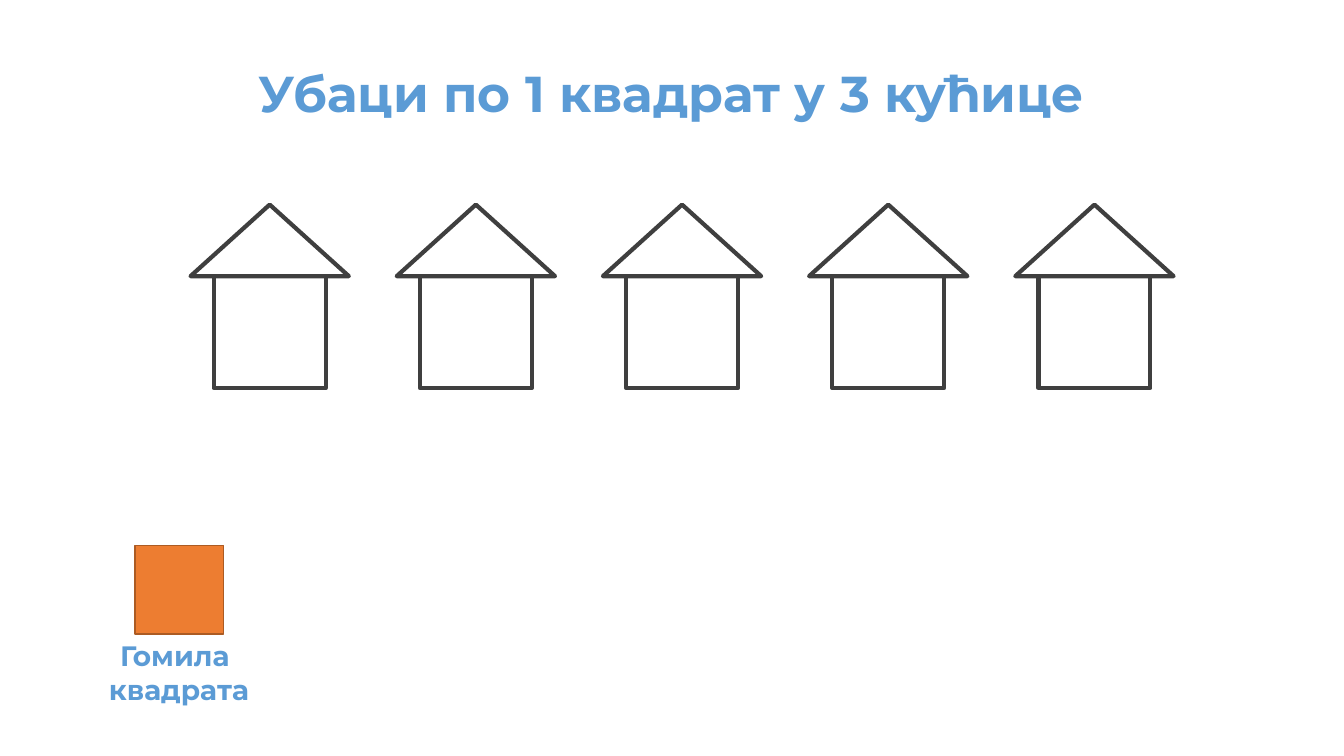
from typing import NamedTuple

from pptx import Presentation
from pptx.dml.color import RGBColor
from pptx.enum import shapes, text
from pptx.util import Inches, Pt

COLORS = {"text": "5B9BD5", "outline": "3F3F3F", "square": "ED7D31", "square_edge": "AC5B23"}
FONT = "Montserrat"

HOUSE_COUNT = 5
FIRST_LEFT, LAST_LEFT = 1.89, 10.07
HOUSE_STEP = (LAST_LEFT - FIRST_LEFT) / (HOUSE_COUNT - 1)


class Box(NamedTuple):
    left: float
    top: float
    width: float
    height: float

    def shifted(self, dx: float) -> "Box":
        return self._replace(left=self.left + dx)

    def lengths(self) -> list:
        return [Inches(value) for value in self]


class Part(NamedTuple):
    kind: shapes.MSO_SHAPE
    box: Box
    line: str
    line_width: float
    fill: str | None = None


class Caption(NamedTuple):
    lines: tuple[str, ...]
    box: Box
    size: float


HOUSE = (
    Part(shapes.MSO_SHAPE.RECTANGLE, Box(FIRST_LEFT + 0.23, 2.74, 1.11, 1.11), "outline", 3),
    Part(shapes.MSO_SHAPE.ISOSCELES_TRIANGLE, Box(FIRST_LEFT, 2.03, 1.57, 0.71), "outline", 3),
)
PILE_SQUARE = Part(
    shapes.MSO_SHAPE.RECTANGLE, Box(1.34, 5.41, 0.88, 0.88), "square_edge", 1, "square"
)
TITLE = Caption(("Убаци по 1 квадрат у 3 кућице",), Box(2.16, 0.57, 9, 0.71), 36)
PILE_LABEL = Caption(("Гомила ", "квадрата"), Box(0.96, 6.29, 1.63, 0.77), 20)


def color(name: str) -> RGBColor:
    return RGBColor.from_string(COLORS[name])


def draw_part(target, part: Part, dx: float = 0) -> None:
    """Draw a part on a slide's or group's shapes, moved right by dx inches."""
    shape = target.add_shape(part.kind, *part.box.shifted(dx).lengths())
    shape.shadow.inherit = False
    shape.line.color.rgb = color(part.line)
    shape.line.width = Pt(part.line_width)
    if part.fill:
        shape.fill.solid()
        shape.fill.fore_color.rgb = color(part.fill)
    else:
        shape.fill.background()


def draw_caption(target, caption: Caption) -> None:
    frame = target.add_textbox(*caption.box.lengths()).text_frame
    frame.word_wrap = True
    frame.auto_size = text.MSO_AUTO_SIZE.SHAPE_TO_FIT_TEXT
    frame.text = "\n".join(caption.lines)
    for paragraph in frame.paragraphs:
        paragraph.alignment = text.PP_ALIGN.CENTER
        paragraph.font.name = FONT
        paragraph.font.size = Pt(caption.size)
        paragraph.font.bold = True
        paragraph.font.color.rgb = color("text")


def main() -> None:
    deck = Presentation()
    deck.slide_width, deck.slide_height = Inches(13.33), Inches(7.5)
    slide = deck.slides.add_slide(deck.slide_layouts[6])

    draw_caption(slide.shapes, TITLE)
    for index in range(HOUSE_COUNT):
        house = slide.shapes.add_group_shape()
        for part in HOUSE:
            draw_part(house.shapes, part, index * HOUSE_STEP)
    draw_part(slide.shapes, PILE_SQUARE)
    draw_caption(slide.shapes, PILE_LABEL)

    deck.save("out.pptx")


if __name__ == "__main__":
    main()
